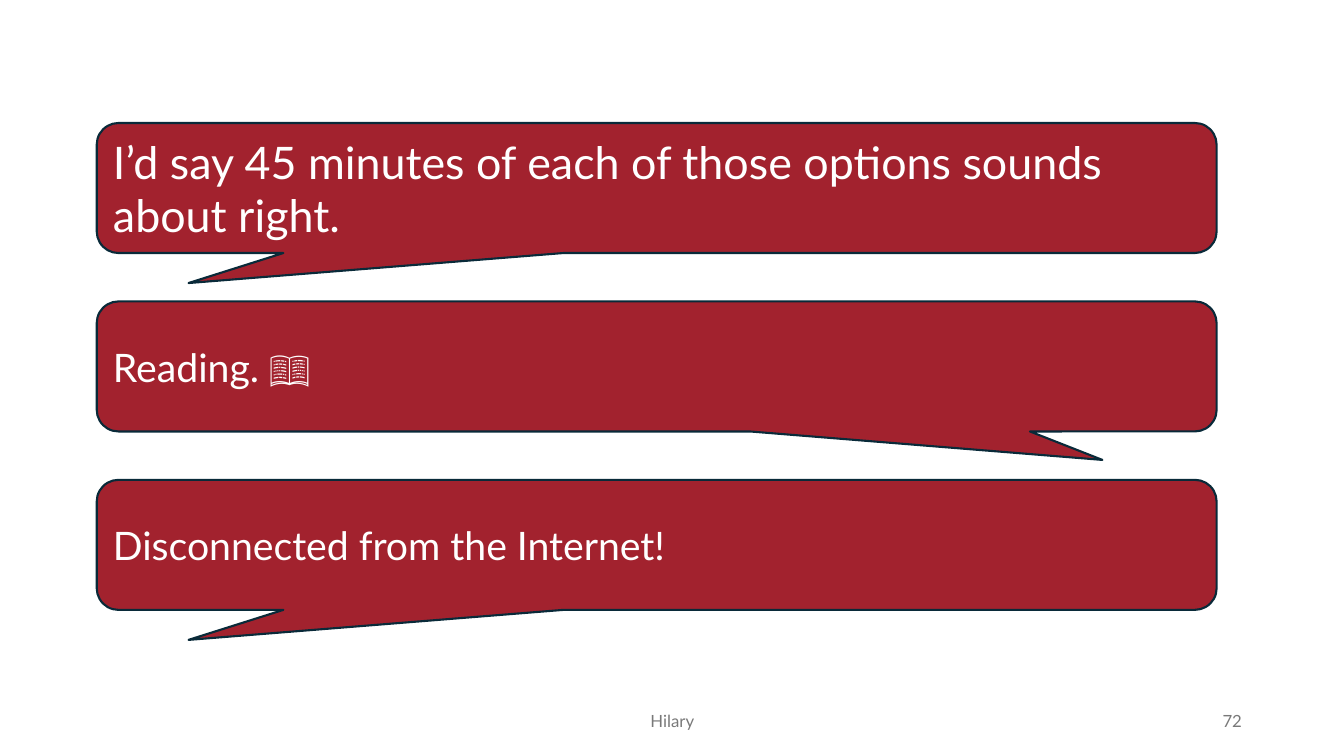
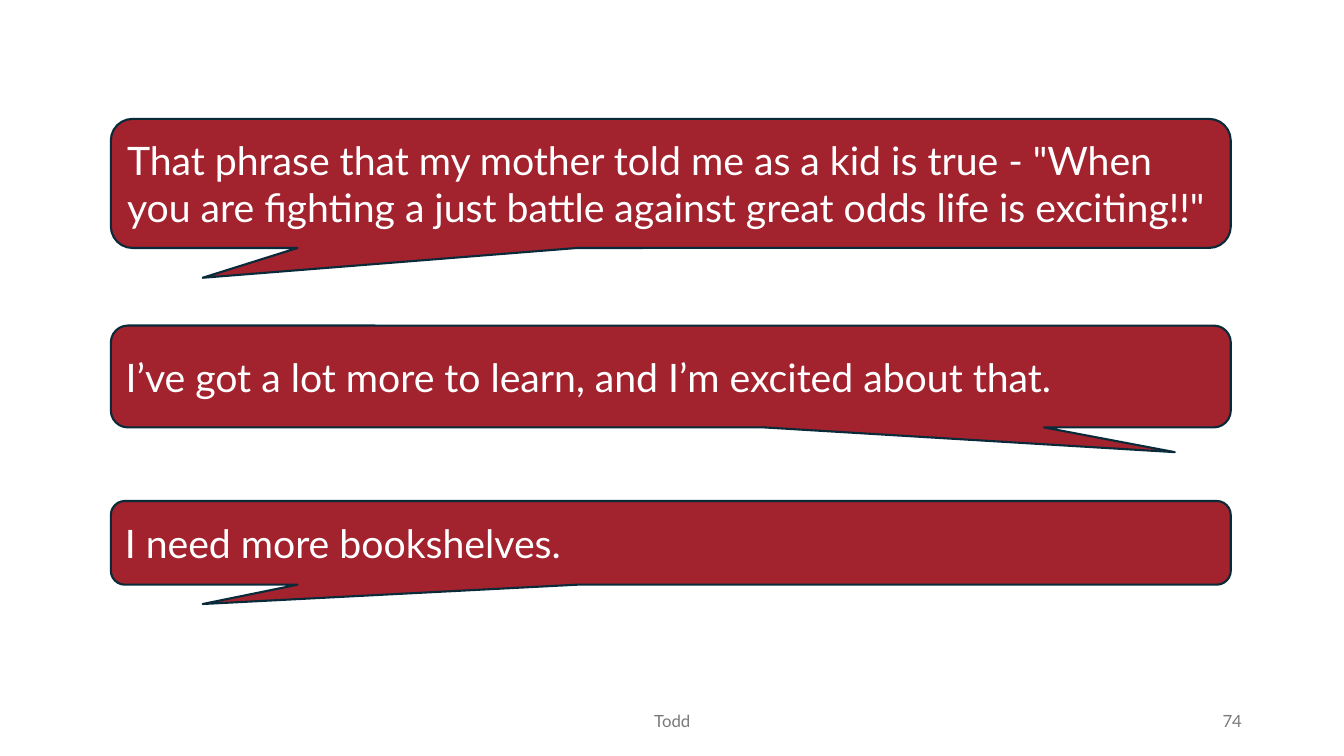
from dataclasses import dataclass

from pptx import Presentation
from pptx.dml.color import RGBColor
from pptx.enum.shapes import MSO_SHAPE
from pptx.enum.text import MSO_ANCHOR, PP_ALIGN
from pptx.slide import Slide
from pptx.text.text import TextFrame
from pptx.util import Inches, Pt

CALLOUT = MSO_SHAPE.ROUNDED_RECTANGULAR_CALLOUT
MIDDLE = MSO_ANCHOR.MIDDLE
LEFT, CENTER, RIGHT = PP_ALIGN.LEFT, PP_ALIGN.CENTER, PP_ALIGN.RIGHT

CRIMSON = RGBColor(0xA2, 0x22, 0x2E)
NAVY = RGBColor(0x09, 0x2A, 0x39)
WHITE = RGBColor(0xFF, 0xFF, 0xFF)
GRAY = RGBColor(0x79, 0x79, 0x79)
FONT = "Lato"

SLIDE_WIDTH, SLIDE_HEIGHT = Inches(13.333), Inches(7.5)
BLANK_LAYOUT = 6

# All places and sizes below are percentages of the slide.
BUBBLE_WIDTH = 83.33
FOOTER_TOP, FOOTER_HEIGHT = 92.67, 5.33
CORNER = 0.167
TAIL_LEFT = (-0.418, 0.731)


@dataclass(frozen=True)
class Bubble:
    lines: tuple[str, ...]
    top: float
    height: float
    tail: tuple[float, float] = TAIL_LEFT
    size: int = 28


@dataclass(frozen=True)
class Conversation:
    speaker: str
    number: int
    left: float
    bubbles: tuple[Bubble, ...]


EVEN_TOP, EVEN_STEP, EVEN_HEIGHT = 16.27, 23.6, 17.2

CONVERSATIONS = (
    Conversation("Hilary", 72, 7.2, (
        Bubble(("I’d say 45 minutes of each of those options sounds",
                "about right."),
               EVEN_TOP, EVEN_HEIGHT, size=32),
        Bubble(("Reading. 📖",), EVEN_TOP + EVEN_STEP, EVEN_HEIGHT,
               tail=(0.398, 0.719)),
        Bubble(("Disconnected from the Internet!",),
               EVEN_TOP + 2 * EVEN_STEP, EVEN_HEIGHT),
    )),
    Conversation("Todd", 74, 8.25, (
        Bubble(('That phrase that my mother told me as a kid is true - "When '
                'you are fighting a just battle against great odds life is '
                'exciting!!"',), 15.73, 17.07),
        Bubble(("I’ve got a lot more to learn, and I’m excited about that.",),
               43.07, 13.47, tail=(0.45, 0.743)),
        Bubble(("I need more bookshelves.",), 66.27, 11.07),
    )),
)


def place(left: float, top: float, width: float,
          height: float) -> tuple[int, int, int, int]:
    """Turn percentages of the slide into lengths."""
    return (round(SLIDE_WIDTH * left / 100), round(SLIDE_HEIGHT * top / 100),
            round(SLIDE_WIDTH * width / 100), round(SLIDE_HEIGHT * height / 100))


def write(frame: TextFrame, *lines: str, size: int, color: RGBColor,
          align: PP_ALIGN = LEFT) -> None:
    frame.word_wrap = True
    frame.vertical_anchor = MIDDLE
    for index, line in enumerate(lines):
        paragraph = frame.add_paragraph() if index else frame.paragraphs[0]
        paragraph.alignment = align
        run = paragraph.add_run()
        run.text = line
        run.font.name = FONT
        run.font.size = Pt(size)
        run.font.color.rgb = color


def add_footer(slide: Slide, speaker: str, number: int) -> None:
    for text, left, width, align in ((speaker, 33.15, 33.75, CENTER),
                                     (str(number), 70.65, 22.5, RIGHT)):
        box = slide.shapes.add_textbox(
            *place(left, FOOTER_TOP, width, FOOTER_HEIGHT))
        write(box.text_frame, text, size=12, color=GRAY, align=align)


def add_bubble(slide: Slide, bubble: Bubble, left: float) -> None:
    callout = slide.shapes.add_shape(
        CALLOUT, *place(left, bubble.top, BUBBLE_WIDTH, bubble.height))
    for index, value in enumerate((*bubble.tail, CORNER)):
        callout.adjustments[index] = value
    callout.shadow.inherit = False
    callout.fill.solid()
    callout.fill.fore_color.rgb = CRIMSON
    callout.line.color.rgb = NAVY
    callout.line.width = Pt(1.5)
    write(callout.text_frame, *bubble.lines, size=bubble.size, color=WHITE)


def main() -> None:
    deck = Presentation()
    deck.slide_width, deck.slide_height = SLIDE_WIDTH, SLIDE_HEIGHT
    for conversation in CONVERSATIONS:
        slide = deck.slides.add_slide(deck.slide_layouts[BLANK_LAYOUT])
        add_footer(slide, conversation.speaker, conversation.number)
        for bubble in conversation.bubbles:
            add_bubble(slide, bubble, conversation.left)
    deck.save("out.pptx")


if __name__ == "__main__":
    main()
